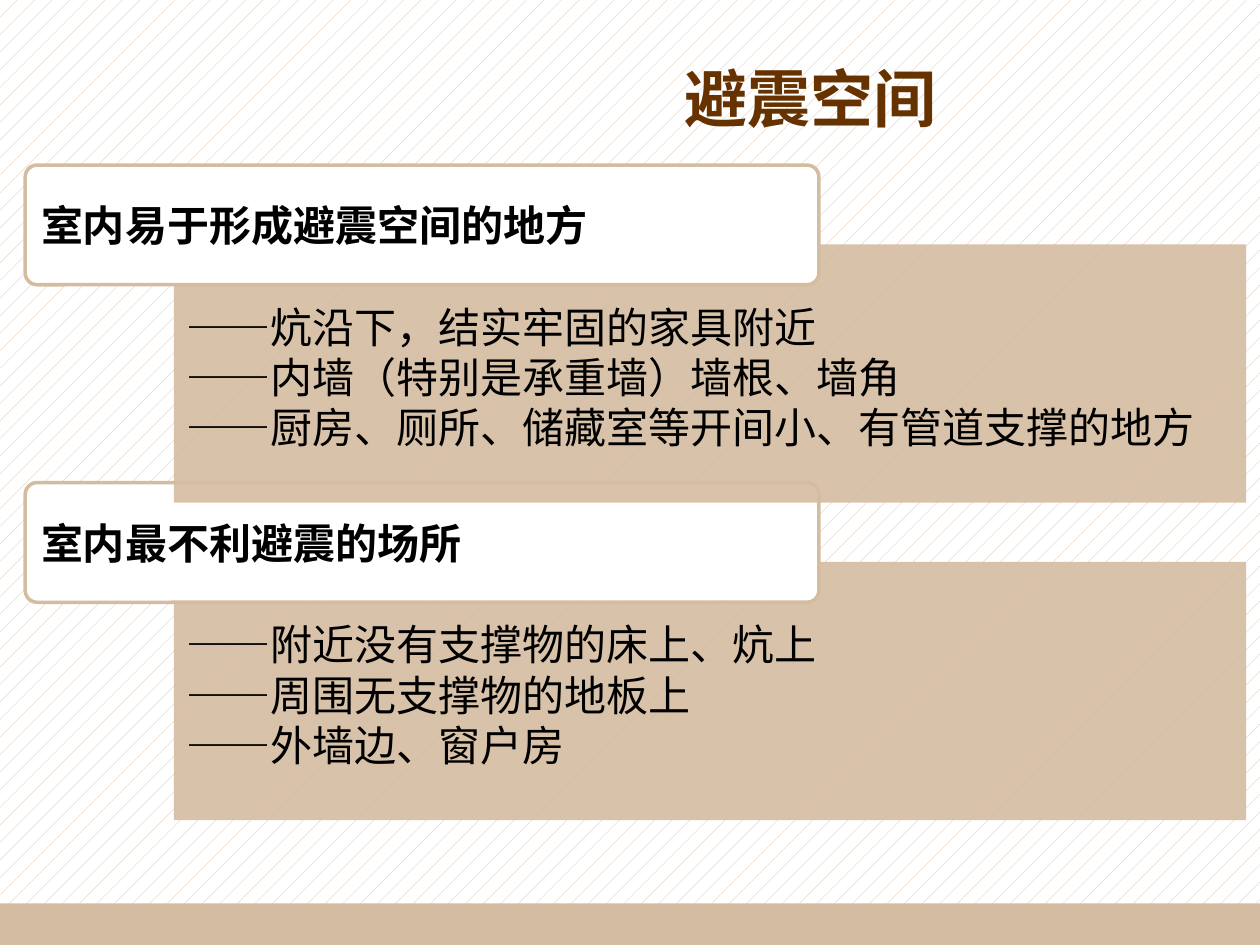
import pptx
import pptx.util
import pptx.dml.color
import pptx.enum.dml
import pptx.enum.shapes
import pptx.enum.text
import pptx.oxml.ns
import lxml.etree

Inches, Pt = pptx.util.Inches, pptx.util.Pt
ALIGN = pptx.enum.text.PP_ALIGN
FONT = "Noto Sans CJK SC"
TAN, WHITE, BLACK, BROWN = "D4BCA0", "FFFFFF", "000000", "663300"

TITLE = {"size": Pt(36), "bold": True, "name": FONT}
HEADING = {"size": Pt(24), "bold": True, "name": FONT}
ITEM = {"size": Pt(24), "bold": False, "name": FONT}

SECTIONS = [
    ("室内易于形成避震空间的地方",
     ["——炕沿下，结实牢固的家具附近",
      "——内墙（特别是承重墙）墙根、墙角",
      "——厨房、厕所、储藏室等开间小、有管道支撑的地方"]),
    ("室内最不利避震的场所",
     ["——附近没有支撑物的床上、炕上",
      "——周围无支撑物的地板上",
      "——外墙边、窗户房"]),
]
FIRST_TOP, PITCH, PANEL_DROP = 1.31, 2.52, 0.63


def rgb(value):
    return pptx.dml.color.RGBColor.from_string(value)


def sub(parent, tag, **attrs):
    return lxml.etree.SubElement(parent, pptx.oxml.ns.qn(tag), **attrs)


def place(sp, left, top, width, height):
    sp.left, sp.top = Inches(left), Inches(top)
    sp.width, sp.height = Inches(width), Inches(height)


def paint(sp, color):
    sp.fill.solid()
    sp.fill.fore_color.rgb = rgb(color)


def write(sp, lines, fmt, color, align=ALIGN.LEFT, spacing=None, margins=(0.05, 0.05)):
    tf = sp.text_frame
    frame = {"word_wrap": True,
             "auto_size": pptx.enum.text.MSO_AUTO_SIZE.NONE,
             "vertical_anchor": pptx.enum.text.MSO_ANCHOR.MIDDLE,
             "margin_top": Inches(margins[0]),
             "margin_bottom": Inches(margins[1])}
    for name, value in frame.items():
        setattr(tf, name, value)
    for i, line in enumerate(lines):
        p = tf.paragraphs[0] if i == 0 else tf.add_paragraph()
        p.alignment, p.space_before, p.line_spacing = align, Pt(0), spacing
        pPr = p._p.get_or_add_pPr()
        pPr.set("marL", "0")
        pPr.set("indent", "0")
        sub(pPr, "a:buNone")
        r = p.add_run()
        r.text = line
        for name, value in fmt.items():
            setattr(r.font, name, value)
        r.font.color.rgb = rgb(color)
        sub(r._r.get_or_add_rPr(), "a:ea", typeface=FONT)


def add_box(s, kind, left, top, width, height, color):
    sp = s.shapes.add_shape(kind, Inches(left), Inches(top), Inches(width), Inches(height))
    sp.shadow.inherit = False
    paint(sp, color)
    sp.line.fill.background()
    return sp


def add_heading(s, text, top):
    sp = add_box(s, pptx.enum.shapes.MSO_SHAPE.ROUNDED_RECTANGLE, 0.2, top, 6.3, 0.95, WHITE)
    sp.adjustments[0] = 0.1
    sp.line.color.rgb = rgb(TAN)
    sp.line.width = Pt(2)
    write(sp, [text], HEADING, BLACK)


def fill_panel(s, sp, items, top):
    # Bring forward: each section overlaps the one below it
    s.shapes._spTree.append(sp._element)
    place(sp, 1.38, top, 8.51, 2.05)
    paint(sp, TAN)
    solid = sp._element.spPr.find(pptx.oxml.ns.qn("a:solidFill"))
    sub(solid[0], "a:alpha", val="90000")
    write(sp, items, ITEM, BLACK, spacing=Pt(28.8), margins=(0.1, 0.05))


def main():
    prs = pptx.Presentation()
    prs.slide_width, prs.slide_height = Inches(10), Inches(7.5)
    s = prs.slides.add_slide(prs.slide_layouts.get_by_name("Two Content"))

    # Patterned background and footer band
    bg = s.background.fill
    bg.patterned()
    bg.pattern = pptx.enum.dml.MSO_PATTERN.PERCENT_5
    bg.fore_color.rgb, bg.back_color.rgb = rgb(TAN), rgb(WHITE)
    add_box(s, pptx.enum.shapes.MSO_SHAPE.RECTANGLE, 0, 7.17, 10, 0.33, TAN)

    # Title
    place(s.shapes.title, 2.87, 0.44, 7.13, 0.71)
    write(s.shapes.title, ["避震空间"], TITLE, BROWN, ALIGN.CENTER, margins=(0, 0.05))

    # Sections, lowest first
    panels = [sp for sp in s.placeholders if sp.placeholder_format.idx in (1, 2)]
    for i in reversed(range(len(SECTIONS))):
        heading, items = SECTIONS[i]
        top = FIRST_TOP + i * PITCH
        fill_panel(s, panels[i], items, top + PANEL_DROP)
        add_heading(s, heading, top)

    prs.save("out.pptx")


if __name__ == "__main__":
    main()
